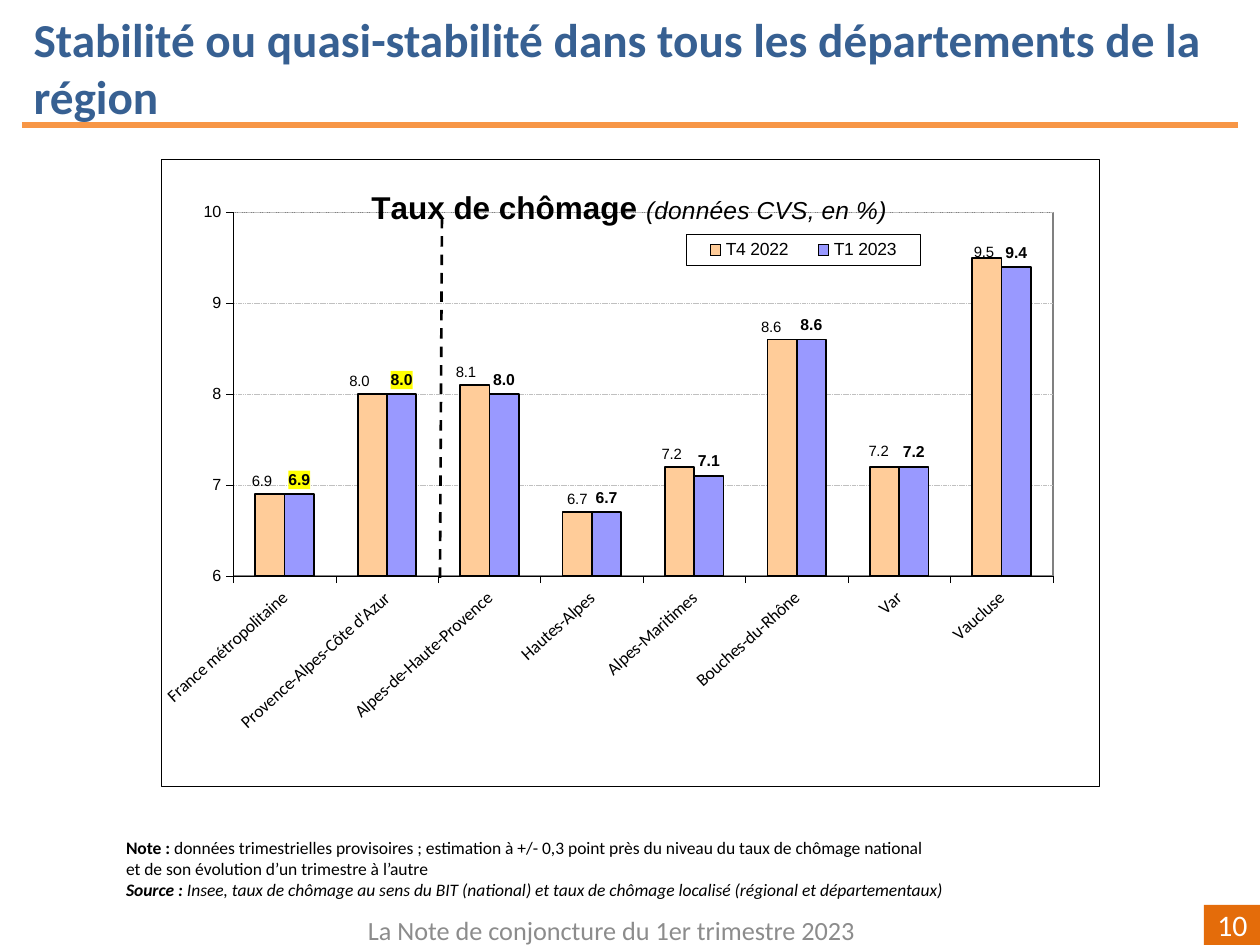
import pptx
import pptx.chart.data
import pptx.dml.color
import pptx.enum.chart
import pptx.enum.dml
import pptx.enum.shapes
import pptx.enum.text
import pptx.oxml
import pptx.oxml.ns
import pptx.util

qn = pptx.oxml.ns.qn
Pt = pptx.util.Pt
XL = pptx.enum.chart
ALIGN = pptx.enum.text.PP_ALIGN
ANCHOR = pptx.enum.text.MSO_ANCHOR
DASH = pptx.enum.dml.MSO_LINE
NS = ('xmlns:c="http://schemas.openxmlformats.org/drawingml/2006/chart" '
      'xmlns:a="http://schemas.openxmlformats.org/drawingml/2006/main"')

DEPARTMENTS = ["France métropolitaine", "Provence-Alpes-Côte d'Azur",
               "Alpes-de-Haute-Provence", "Hautes-Alpes", "Alpes-Maritimes",
               "Bouches-du-Rhône", "Var", "Vaucluse"]
RATES = {"T4 2022": [6.9, 8.0, 8.1, 6.7, 7.2, 8.6, 7.2, 9.5],
         "T1 2023": [6.9, 8.0, 8.0, 6.7, 7.1, 8.6, 7.2, 9.4]}
SERIES_STYLE = [("FFCC99", 8.5, False), ("9999FF", 9, True)]
LABEL_SHIFTS = {0: (-8, 0), 1: (-13, 0), 2: (-9, 0), 4: (-8, 0),
                5: (-11, 0), 6: (-6, -3), 7: (-3, 7)}
HIGHLIGHTED = (0, 1)
CHART_BOX = (161, 159, 938, 627)


def px(n):
    return round(n * 914400 / 126)


def color(value):
    return pptx.dml.color.RGBColor.from_string(value)


def set_font(font, size, name="Arial", fill="000000", bold=False, italic=False):
    font.size, font.name, font.bold, font.italic = Pt(size), name, bold, italic
    font.color.rgb = color(fill)


def set_line(line, fill, width, dash=None):
    line.color.rgb = color(fill)
    line.width = Pt(width)
    if dash:
        line.dash_style = dash


def set_layout(parent, after, x, y, w=None, h=None, target="", mode="edge"):
    for old in parent.findall(qn("c:layout")):
        parent.remove(old)
    tags = f'<c:layoutTarget val="{target}"/>' if target else ""
    if mode == "edge":
        tags += '<c:xMode val="edge"/><c:yMode val="edge"/>'
    for tag, value in zip("xywh", (x, y, w, h)):
        if value is not None:
            tags += f'<c:{tag} val="{value}"/>'
    layout = pptx.oxml.parse_xml(
        f"<c:layout {NS}><c:manualLayout>{tags}</c:manualLayout></c:layout>")
    if after:
        parent.find(qn(after)).addnext(layout)
    else:
        parent.insert(0, layout)


def box_style(fill, line=None, width=0.25):
    stroke = "<a:ln><a:noFill/></a:ln>"
    if line:
        stroke = (f'<a:ln w="{Pt(width)}"><a:solidFill><a:srgbClr val="{line}"/>'
                  "</a:solidFill></a:ln>")
    return pptx.oxml.parse_xml(
        f'<c:spPr {NS}><a:solidFill><a:srgbClr val="{fill}"/></a:solidFill>{stroke}</c:spPr>')


class Deck:
    def __init__(self):
        self.prs = pptx.Presentation()
        self.prs.slide_width, self.prs.slide_height = px(1260), px(945)
        self.s = self.prs.slides.add_slide(self.prs.slide_layouts[5])
        self.font = "Calibri"

    def fill_text(self, tf, paragraphs, size, fill="000000", align=ALIGN.LEFT):
        tf.word_wrap = True
        for i, runs in enumerate(paragraphs):
            p = tf.add_paragraph() if i else tf.paragraphs[0]
            p.alignment = align
            for text, bold, italic in runs:
                r = p.add_run()
                r.text = text
                set_font(r.font, size, self.font, fill, bold, italic)

    def title(self, box, text):
        sp = self.s.shapes.title
        sp.left, sp.top, sp.width, sp.height = map(px, box)
        sp.text_frame.auto_size = pptx.enum.text.MSO_AUTO_SIZE.NONE
        sp.text_frame.vertical_anchor = ANCHOR.TOP
        self.fill_text(sp.text_frame, [[(text, True, False)]], 27, "376092")

    def text(self, box, paragraphs, size, fill="000000", align=ALIGN.LEFT,
             anchor=ANCHOR.TOP, insets=(13, 6, 13, 6)):
        tf = self.s.shapes.add_textbox(*map(px, box)).text_frame
        tf.margin_left, tf.margin_top, tf.margin_right, tf.margin_bottom = map(px, insets)
        tf.vertical_anchor = anchor
        self.fill_text(tf, paragraphs, size, fill, align)

    def badge(self, box, text):
        sp = self.s.shapes.add_shape(
            pptx.enum.shapes.MSO_SHAPE.RECTANGLE, *map(px, box))
        sp.shadow.inherit = False
        sp.fill.solid()
        sp.fill.fore_color.rgb = color("E46C0A")
        sp.line.fill.background()
        sp.text_frame.vertical_anchor = ANCHOR.MIDDLE
        self.fill_text(sp.text_frame, [[(text, False, False)]], 17, "FFFFFF", ALIGN.RIGHT)

    def line(self, ends, fill, width, dash=None):
        ln = self.s.shapes.add_connector(
            pptx.enum.shapes.MSO_CONNECTOR.STRAIGHT, *map(px, ends))
        set_line(ln.line, fill, width, dash)
        ln._element.spPr.append(pptx.oxml.parse_xml(f"<a:effectLst {NS}/>"))

    def chart(self, box):
        data = pptx.chart.data.CategoryChartData(number_format="0.0")
        data.categories = DEPARTMENTS
        for name, values in RATES.items():
            data.add_series(name, values)
        chart = self.s.shapes.add_chart(
            XL.XL_CHART_TYPE.COLUMN_CLUSTERED, *map(px, box), data).chart
        set_font(chart.font, 8.5)
        space = chart._chartSpace
        space.find(qn("c:chart")).addnext(box_style("FFFFFF", "000000"))
        plot_area = space.find(".//" + qn("c:plotArea"))
        set_layout(plot_area, None, 0.077, 0.085, 0.874, 0.58, "inner")
        plot_area.append(box_style("FFFFFF", "808080", 1))
        self.chart_title(chart)
        self.chart_legend(chart)
        self.chart_axes(chart)
        self.chart_series(chart.plots[0])

    def chart_title(self, chart):
        chart.has_title = True
        p = chart.chart_title.text_frame.paragraphs[0]
        for text, size, bold in (("Taux de chômage ", 18, True),
                                 ("(données CVS, en %)", 14, False)):
            r = p.add_run()
            r.text = text
            set_font(r.font, size, bold=bold, italic=not bold)
        title = chart.chart_title._element
        set_layout(title, "c:tx", 0.22, 0.04)
        title.find(qn("c:overlay")).set("val", "1")

    def chart_legend(self, chart):
        chart.has_legend = True
        legend = chart.legend
        legend.position = XL.XL_LEGEND_POSITION.RIGHT
        legend.include_in_layout = False
        set_font(legend.font, 10)
        set_layout(legend._element, "c:legendPos", 0.56, 0.12, 0.25, 0.05)
        legend._element.find(qn("c:overlay")).addnext(box_style("FFFFFF", "000000"))

    def chart_axes(self, chart):
        cat, val = chart.category_axis, chart.value_axis
        for axis, size, font in ((cat, 10, self.font), (val, 9.2, "Arial")):
            axis.major_tick_mark = XL.XL_TICK_MARK.OUTSIDE
            set_font(axis.tick_labels.font, size, font)
            set_line(axis.format.line, "000000", 0.25)
        cat._element.find(".//" + qn("a:bodyPr")).set("rot", str(-42 * 60000))
        val.minimum_scale, val.maximum_scale, val.major_unit = 6, 10, 1
        val.tick_labels.number_format = "0"
        val.tick_labels.number_format_is_linked = False
        val.has_major_gridlines = True
        set_line(val.major_gridlines.format.line, "C0C0C0", 0.25, DASH.SQUARE_DOT)

    def chart_series(self, plot):
        plot.gap_width, plot.overlap, plot.vary_by_categories = 150, 0, False
        for series, (fill, size, bold) in zip(plot.series, SERIES_STYLE):
            series.format.fill.solid()
            series.format.fill.fore_color.rgb = color(fill)
            set_line(series.format.line, "000000", 1)
            labels = series.data_labels
            labels.show_value = True
            labels.number_format, labels.number_format_is_linked = "0.0", False
            labels.position = XL.XL_LABEL_POSITION.OUTSIDE_END
            set_font(labels.font, size, bold=bold)
            for i in HIGHLIGHTED if bold else LABEL_SHIFTS:
                label = series.points[i].data_label
                label.position = XL.XL_LABEL_POSITION.OUTSIDE_END
                set_font(label.font, size, bold=bold)
                d = series._element.findall(".//" + qn("c:dLbl"))[-1]
                if bold:
                    d.find(qn("c:txPr")).addprevious(box_style("FFFF00"))
                else:
                    dx, dy = LABEL_SHIFTS[i]
                    set_layout(d, "c:idx", dx / CHART_BOX[2], dy / CHART_BOX[3],
                               mode="factor")


def main():
    deck = Deck()
    deck.title((21, 4, 1236, 127),
               "Stabilité ou quasi-stabilité dans tous les départements de la région")
    deck.line((22, 125, 1238, 125), "F79646", 3)
    deck.badge((1204, 905, 56, 40), "10")
    deck.text((304, 905, 615, 50),
              [[("La Note de conjoncture du 1er trimestre 2023", False, False)]],
              15, "8C8C8C", ALIGN.CENTER, ANCHOR.MIDDLE)
    deck.text((123, 833, 861, 67), [
        [("Note : ", True, False),
         ("données trimestrielles provisoires ; estimation à +/- 0,3 point près "
          "du niveau du taux de chômage national", False, False)],
        [("et de son évolution d’un trimestre à l’autre", False, False)],
        [("Source : ", True, True),
         ("Insee, taux de chômage au sens du BIT (national) et taux de chômage "
          "localisé (régional et départementaux)", False, True)],
    ], 10, insets=(3, 4, 0, 0))
    deck.chart(CHART_BOX)
    deck.line((440, 578, 442, 214), "000000", 1.5, DASH.DASH)
    deck.prs.save("out.pptx")


if __name__ == "__main__":
    main()
